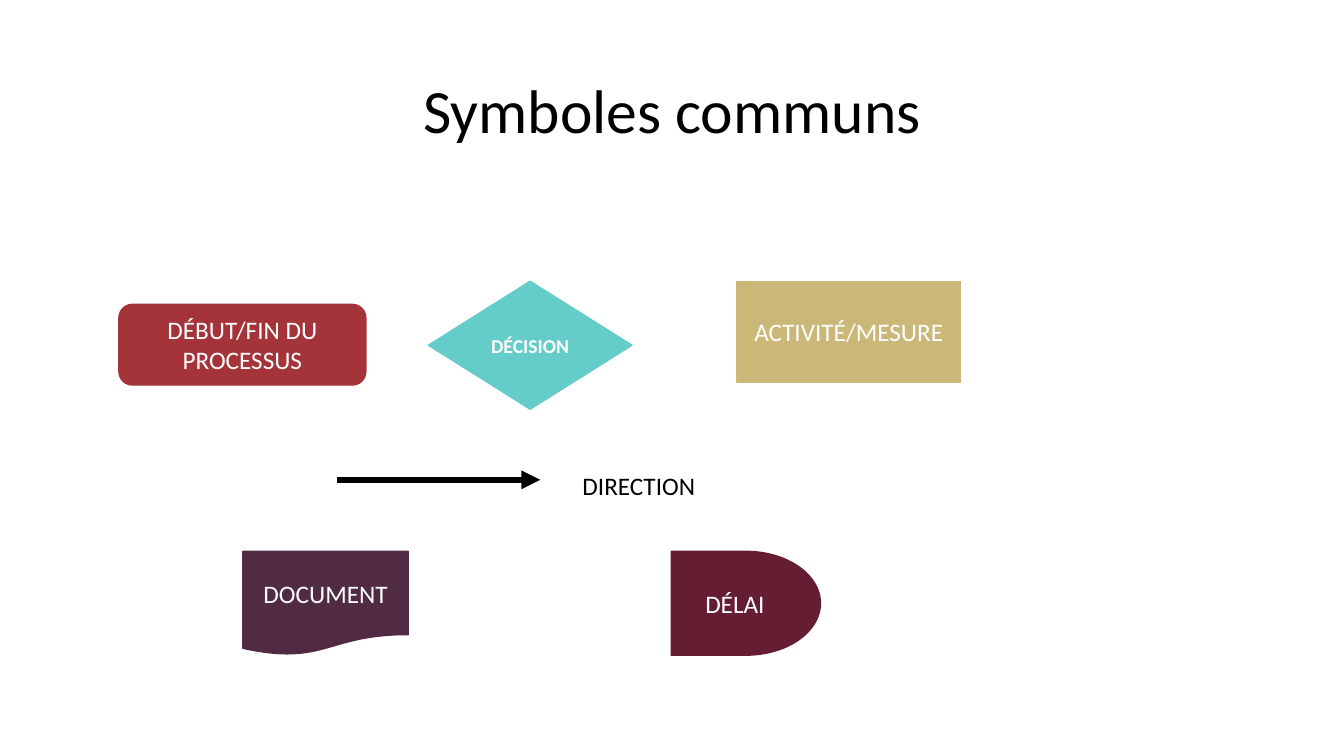
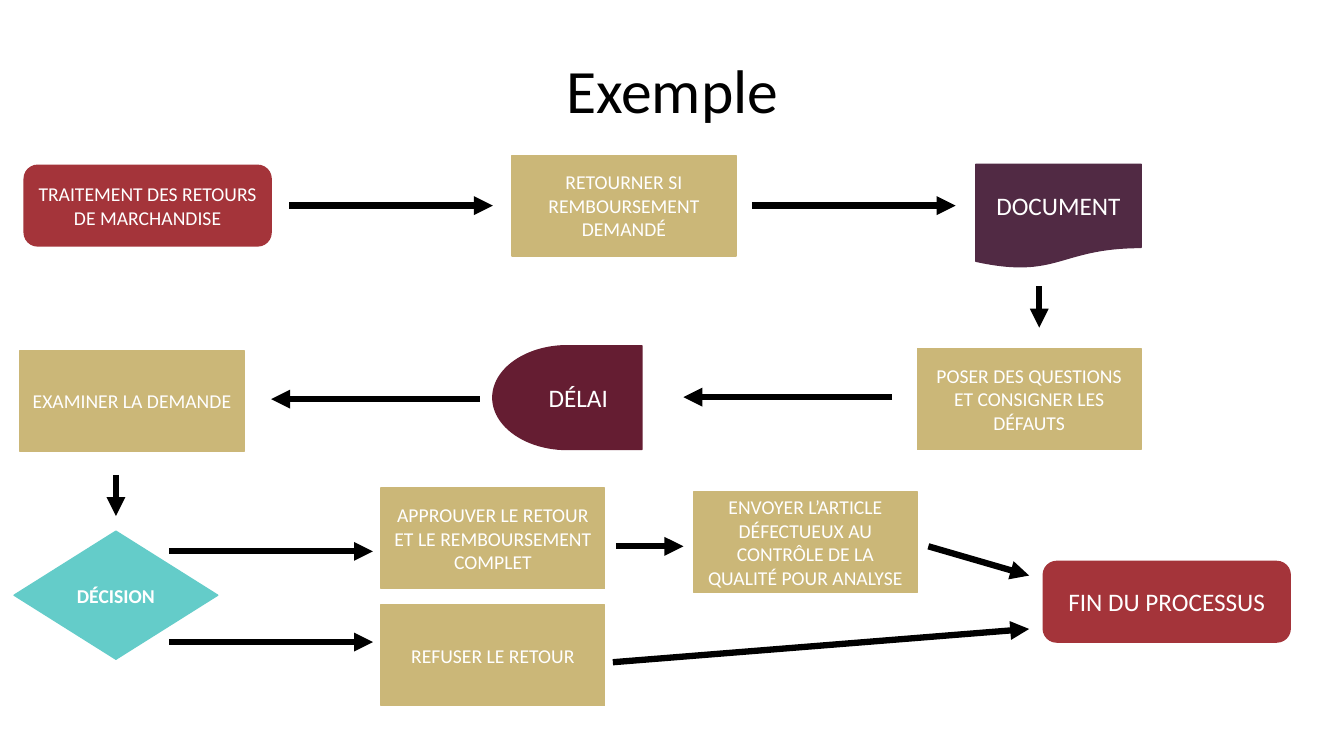
from pptx import Presentation
from pptx.dml.color import RGBColor
from pptx.enum.shapes import MSO_CONNECTOR, MSO_SHAPE
from pptx.enum.text import MSO_ANCHOR, PP_ALIGN
from pptx.oxml.ns import qn
from pptx.util import Inches, Pt
from lxml.etree import SubElement

# Shared grid: 40 columns by 30 rows
WIDTH, HEIGHT = Inches(13.33), Inches(7.5)
COLS, ROWS = 40, 30

FONT = "Calibri"
BLACK, WHITE = "000000", "FFFFFF"
LARGE, SMALL = 18, 14

# Flowchart symbols: preset, columns, rows, colour
SYMBOLS = {
    "terminal": (MSO_SHAPE.FLOWCHART_ALTERNATE_PROCESS, 7.35, 3.2, "A4343A"),
    "decision": (MSO_SHAPE.FLOWCHART_DECISION, 6.06, 5.08, "64CCC9"),
    "activity": (MSO_SHAPE.FLOWCHART_PROCESS, 6.66, 4, "CBB778"),
    "document": (MSO_SHAPE.FLOWCHART_DOCUMENT, 4.92, 4.12, "512A44"),
    "delay": (MSO_SHAPE.FLOWCHART_DELAY, 4.44, 4.12, "651D32"),
}


def x(col):
    return round(WIDTH * col / COLS)


def y(row):
    return round(HEIGHT * row / ROWS)


def rgb(value):
    return RGBColor.from_string(value)


def write(tf, text, size, color, align=PP_ALIGN.CENTER, bold=False, spacing=None):
    tf.word_wrap = True
    tf.text = text
    for p in tf.paragraphs:
        p.alignment = align
        p.line_spacing = spacing
        for r in p.runs:
            r.font.name = FONT
            r.font.size = Pt(size)
            r.font.bold = bold
            r.font.color.rgb = rgb(color)


def add_symbol(s, kind, col, row, text, size=LARGE, flip=False):
    preset, cols, rows, color = SYMBOLS[kind]
    sp = s.shapes.add_shape(preset, x(col), y(row), x(cols), y(rows))
    sp.shadow.inherit = False
    sp.fill.solid()
    sp.fill.fore_color.rgb = rgb(color)
    sp.line.color.rgb = rgb(color)
    sp.line.width = Pt(1)
    if flip:
        sp.element.spPr.find(qn("a:xfrm")).set("flipH", "1")
    sp.text_frame.vertical_anchor = MSO_ANCHOR.MIDDLE
    write(sp.text_frame, text, size, WHITE, bold=kind == "decision")


def add_arrow(s, col1, row1, col2, row2):
    line = s.shapes.add_connector(
        MSO_CONNECTOR.STRAIGHT, x(col1), y(row1), x(col2), y(row2))
    line.line.color.rgb = rgb(BLACK)
    line.line.width = Pt(4.5)
    SubElement(line.line._get_or_add_ln(), qn("a:tailEnd"), type="triangle")
    SubElement(line.element.spPr, qn("a:effectLst"))


def add_label(s, col, row, cols, rows, text):
    tf = s.shapes.add_textbox(x(col), y(row), x(cols), y(rows)).text_frame
    write(tf, text, LARGE, BLACK, PP_ALIGN.LEFT)


def add_title(s, row, text):
    tf = s.shapes.add_textbox(x(2.76), y(row), x(34.5), y(5.8)).text_frame
    tf.vertical_anchor = MSO_ANCHOR.MIDDLE
    write(tf, text, 44, BLACK, spacing=0.9)


def add_slide(prs, title, title_row, symbols, arrows):
    s = prs.slides.add_slide(prs.slide_layouts[6])
    add_title(s, title_row, title)
    for symbol in symbols:
        add_symbol(s, *symbol)
    for arrow in arrows:
        add_arrow(s, *arrow)
    return s


def main():
    prs = Presentation()
    prs.slide_width, prs.slide_height = WIDTH, HEIGHT

    # Legend of symbols
    s = add_slide(prs, "Symboles communs", 1.6, [
        ("terminal", 3.54, 12.08, "DÉBUT/FIN DU\nPROCESSUS"),
        ("decision", 12.75, 11.16, "DÉCISION", SMALL),
        ("activity", 21.93, 11.16, "ACTIVITÉ/MESURE"),
        ("document", 7.23, 21.88, "DOCUMENT"),
        ("delay", 19.98, 21.88, "DÉLAI"),
    ], [(10.02, 19.04, 16.08, 19.04)])
    add_label(s, 17.04, 18.48, 7.35, 1.6, "DIRECTION")

    # Worked example
    add_slide(prs, "Exemple", 0.8, [
        ("terminal", 0.72, 6.56, "TRAITEMENT DES RETOURS DE MARCHANDISE", SMALL),
        ("activity", 15.24, 6.16, "RETOURNER SI REMBOURSEMENT DEMANDÉ", SMALL),
        ("document", 29.04, 6.52, "DOCUMENT"),
        ("activity", 27.3, 13.84,
         "POSER DES QUESTIONS ET CONSIGNER LES DÉFAUTS", SMALL),
        ("delay", 14.67, 13.72, "DÉLAI", LARGE, True),
        ("activity", 0.6, 13.92, "EXAMINER LA DEMANDE", SMALL),
        ("decision", 0.42, 21.08, "DÉCISION", SMALL),
        ("activity", 11.34, 19.36,
         "APPROUVER LE RETOUR ET LE REMBOURSEMENT COMPLET", SMALL),
        ("activity", 11.34, 24, "REFUSER LE RETOUR", SMALL),
        ("activity", 20.64, 19.52,
         "ENVOYER L’ARTICLE DÉFECTUEUX AU CONTRÔLE DE LA QUALITÉ POUR ANALYSE",
         SMALL),
        ("terminal", 31.05, 22.28, "FIN DU PROCESSUS"),
    ], [
        # Top row, then down
        (8.61, 8.16, 14.67, 8.16),
        (22.38, 8.16, 28.44, 8.16),
        (30.93, 11.36, 30.93, 13),
        # Middle row, then down
        (26.55, 15.76, 20.34, 15.76),
        (14.28, 15.84, 8.07, 15.84),
        (3.45, 18.84, 3.45, 20.48),
        # Two outcomes of the decision
        (5.04, 21.88, 11.1, 21.88),
        (5.04, 25.48, 11.1, 25.48),
        (18.33, 21.68, 20.34, 21.68),
        (27.63, 21.68, 30.63, 22.84),
        (18.24, 26.28, 30.63, 24.96),
    ])

    prs.save("out.pptx")


if __name__ == "__main__":
    main()
